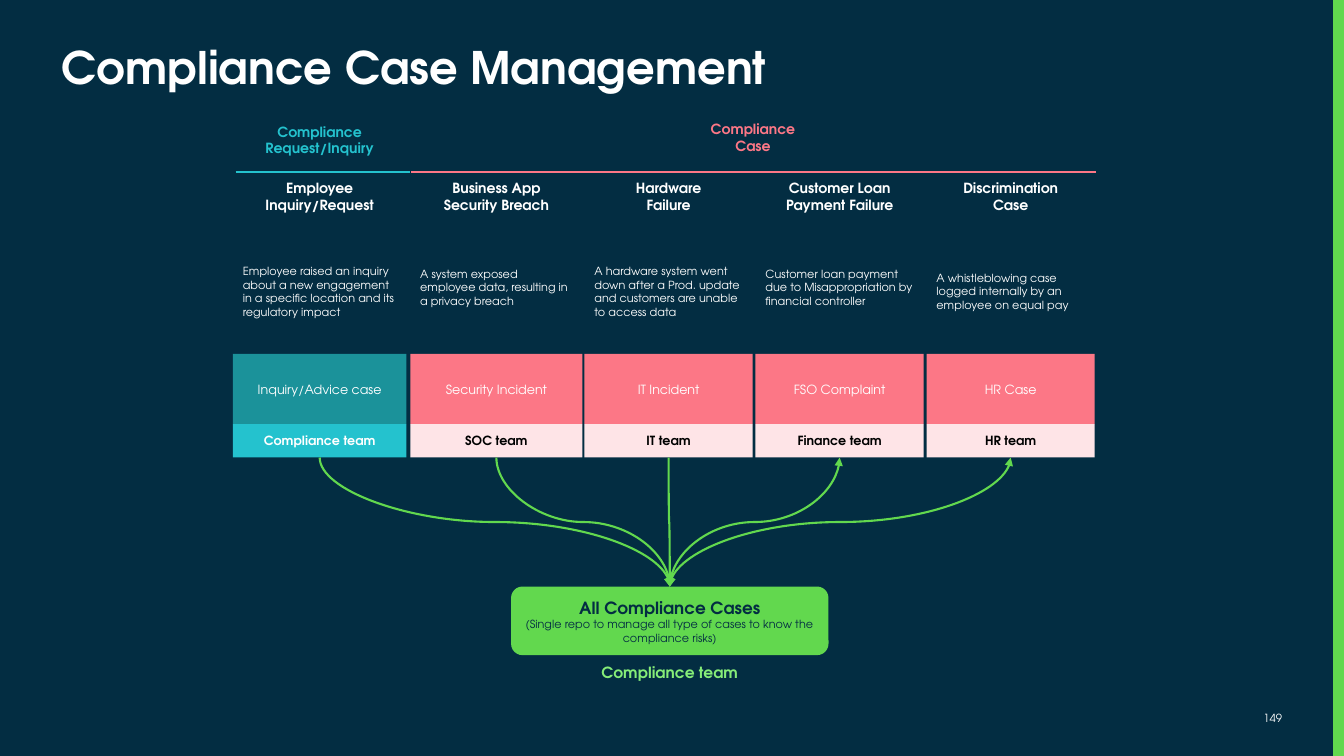
from dataclasses import dataclass

import lxml.etree
import pptx
import pptx.dml.color
import pptx.enum.shapes
import pptx.enum.text
import pptx.oxml.ns
import pptx.shapes.autoshape
import pptx.shapes.connector
import pptx.slide
import pptx.util

Cm = pptx.util.Cm
RGBColor = pptx.dml.color.RGBColor
SHAPE = pptx.enum.shapes.MSO_SHAPE
CONNECTOR = pptx.enum.shapes.MSO_CONNECTOR
ALIGN = pptx.enum.text.PP_ALIGN
ANCHOR = pptx.enum.text.MSO_ANCHOR
qn = pptx.oxml.ns.qn

FONT = "TeX Gyre Adventor"
NAVY = RGBColor(0x03, 0x2D, 0x42)
GREEN = RGBColor(0x62, 0xD8, 0x4E)
LIGHT_GREEN = RGBColor(0x86, 0xED, 0x78)
TEAL = RGBColor(0x1B, 0x92, 0x9A)
CYAN = RGBColor(0x24, 0xC2, 0xCE)
CORAL = RGBColor(0xFC, 0x77, 0x86)
BLUSH = RGBColor(0xFE, 0xE4, 0xE7)
WHITE = RGBColor(0xFF, 0xFF, 0xFF)
BLACK = RGBColor(0, 0, 0)


@dataclass(frozen=True)
class Box:
    left: float
    top: float
    width: float
    height: float

    def lengths(self) -> list[pptx.util.Length]:
        return [Cm(v) for v in (self.left, self.top, self.width, self.height)]


@dataclass(frozen=True)
class Line:
    text: str
    size: float
    color: RGBColor
    bold: bool = False
    align: ALIGN = ALIGN.CENTER


@dataclass(frozen=True)
class Column:
    left: float
    width: float
    heading: list[str]
    description: str
    description_height: float
    case: str
    team: str
    case_fill: RGBColor = CORAL
    team_fill: RGBColor = BLUSH
    team_color: RGBColor = BLACK


COLUMNS = [
    Column(5.87, 4.37, ["Employee Inquiry/Request"],
           "Employee raised an inquiry about a new engagement in a specific "
           "location and its regulatory impact", 3.15,
           "Inquiry/Advice case", "Compliance team", TEAL, CYAN, WHITE),
    Column(10.34, 4.34, ["Business App", "Security Breach"],
           "A system exposed employee data, resulting in a privacy breach", 2.95,
           "Security Incident", "SOC team"),
    Column(14.73, 4.24, ["Hardware", "Failure"],
           "A hardware system went down after a Prod. update and customers "
           "are unable to access data", 3.15,
           "IT Incident", "IT team"),
    Column(19.04, 4.24, ["Customer Loan", "Payment Failure"],
           "Customer loan payment due to Misappropriation by financial controller",
           2.95, "FSO Complaint", "Finance team"),
    Column(23.35, 4.24, ["Discrimination", "Case"],
           "A whistleblowing case logged internally by an employee on equal pay",
           3.15, "HR Case", "HR team"),
]


def set_all(target: object, values: dict[str, object]) -> None:
    for name, value in values.items():
        setattr(target, name, value)


def write(sp: pptx.shapes.autoshape.Shape, lines: list[Line],
          anchor: ANCHOR = ANCHOR.MIDDLE) -> None:
    tf = sp.text_frame
    set_all(tf, {"word_wrap": True, "vertical_anchor": anchor,
                 "auto_size": pptx.enum.text.MSO_AUTO_SIZE.NONE})
    for i, line in enumerate(lines):
        p = tf.add_paragraph() if i else tf.paragraphs[0]
        p.alignment = line.align
        r = p.add_run()
        r.text = line.text
        set_all(r.font, {"name": FONT, "size": pptx.util.Pt(line.size),
                         "bold": line.bold})
        r.font.color.rgb = line.color


def add_text(s: pptx.slide.Slide, box: Box, lines: list[Line],
             anchor: ANCHOR = ANCHOR.MIDDLE) -> pptx.shapes.autoshape.Shape:
    sp = s.shapes.add_textbox(*box.lengths())
    write(sp, lines, anchor)
    return sp


def add_block(s: pptx.slide.Slide, box: Box, fill: RGBColor, lines: list[Line],
              kind: SHAPE = SHAPE.RECTANGLE) -> pptx.shapes.autoshape.Shape:
    sp = s.shapes.add_shape(kind, *box.lengths())
    sp.shadow.inherit = False
    sp.fill.solid()
    sp.fill.fore_color.rgb = fill
    sp.line.fill.background()
    write(sp, lines)
    return sp


def style_line(c: pptx.shapes.connector.Connector, color: RGBColor,
               arrows: tuple[str, ...] = ()) -> None:
    c.line.width = pptx.util.Pt(1.5)
    c.line.color.rgb = color
    spPr = c._element.spPr
    for end in arrows:
        lxml.etree.SubElement(spPr.find(qn("a:ln")), qn(f"a:{end}"), type="triangle")
    lxml.etree.SubElement(spPr, qn("a:effectLst"))


def add_rule(s: pptx.slide.Slide, x1: float, x2: float, color: RGBColor) -> None:
    c = s.shapes.add_connector(CONNECTOR.STRAIGHT, Cm(x1), Cm(4.33), Cm(x2), Cm(4.33))
    style_line(c, color)


def add_curve(s: pptx.slide.Slide, team: pptx.shapes.autoshape.Shape,
              repo: pptx.shapes.autoshape.Shape) -> None:
    x1, y1 = team.left + team.width // 2, team.top + team.height
    x2, y2 = repo.left + repo.width // 2, repo.top
    from_right = x1 > x2
    c = s.shapes.add_connector(CONNECTOR.CURVE, x1, y1, x2, y2)
    c.begin_connect(team, 2)
    c.end_connect(repo, 0)
    width, height = y2 - y1, abs(x2 - x1)
    set_all(c, {"left": (x1 + x2 - width) // 2, "top": (y1 + y2 - height) // 2,
                "width": width, "height": height})
    xfrm = c._element.spPr.find(qn("a:xfrm"))
    for name, value in {"rot": "5400000" if from_right else "16200000",
                        "flipH": "0" if from_right else "1", "flipV": "0"}.items():
        xfrm.set(name, value)
    style_line(c, GREEN, ("headEnd", "tailEnd") if from_right else ("tailEnd",))


def add_column(s: pptx.slide.Slide, col: Column) -> pptx.shapes.autoshape.Shape:
    def row(top: float, height: float) -> Box:
        return Box(col.left, top, col.width, height)

    add_text(s, row(4.17, 1.57), [Line(t, 10, WHITE, True) for t in col.heading])
    add_block(s, row(5.77, col.description_height), NAVY,
              [Line(col.description, 8, WHITE, align=ALIGN.LEFT)])
    add_block(s, row(8.92, 1.77), col.case_fill, [Line(col.case, 9, WHITE)])
    return add_block(s, row(10.69, 0.84), col.team_fill,
                     [Line(col.team, 9, col.team_color, True)])


def main() -> None:
    prs = pptx.Presentation()
    set_all(prs, {"slide_width": Cm(33.87), "slide_height": Cm(19.05)})
    s = prs.slides.add_slide(prs.slide_layouts[5])
    s.background.fill.solid()
    s.background.fill.fore_color.rgb = NAVY

    title = s.shapes.title
    set_all(title, dict(zip(("left", "top", "width", "height"),
                            Box(1.3, 1.02, 31.09, 1.8).lengths())))
    write(title, [Line("Compliance Case Management", 32, WHITE, True, ALIGN.LEFT)],
          ANCHOR.TOP)
    title.text_frame.paragraphs[0].line_spacing = 0.9

    add_text(s, Box(30.71, 17.81, 1.85, 0.64),
             [Line("149", 8, WHITE, align=ALIGN.RIGHT)], ANCHOR.TOP)
    add_block(s, Box(33.6, 0, 0.27, 19.05), GREEN, [])

    teams = [add_column(s, col) for col in COLUMNS]

    repo = add_block(s, Box(12.88, 14.78, 8, 1.73), GREEN, [
        Line("All Compliance Cases", 12, NAVY, True),
        Line("(Single repo to manage all type of cases to know the compliance risks)",
             8, NAVY)], SHAPE.ROUNDED_RECTANGLE)
    owner = add_text(s, Box(12.88, 16.59, 8, 0.84),
                     [Line("Compliance team", 11, LIGHT_GREEN, True)], ANCHOR.TOP)
    owner.text_frame.paragraphs[0].space_after = pptx.util.Pt(12)
    for team in teams:
        add_curve(s, team, repo)

    for box, second, color, x1, x2 in (
            (Box(5.87, 2.74, 4.37, 1.57), "Request/Inquiry", CYAN, 5.94, 10.34),
            (Box(10.34, 2.67, 17.27, 1.57), "Case", CORAL, 10.36, 27.61)):
        add_text(s, box, [Line(t, 10, color, True) for t in ("Compliance", second)])
        add_rule(s, x1, x2, color)

    prs.save("out.pptx")


if __name__ == "__main__":
    main()
